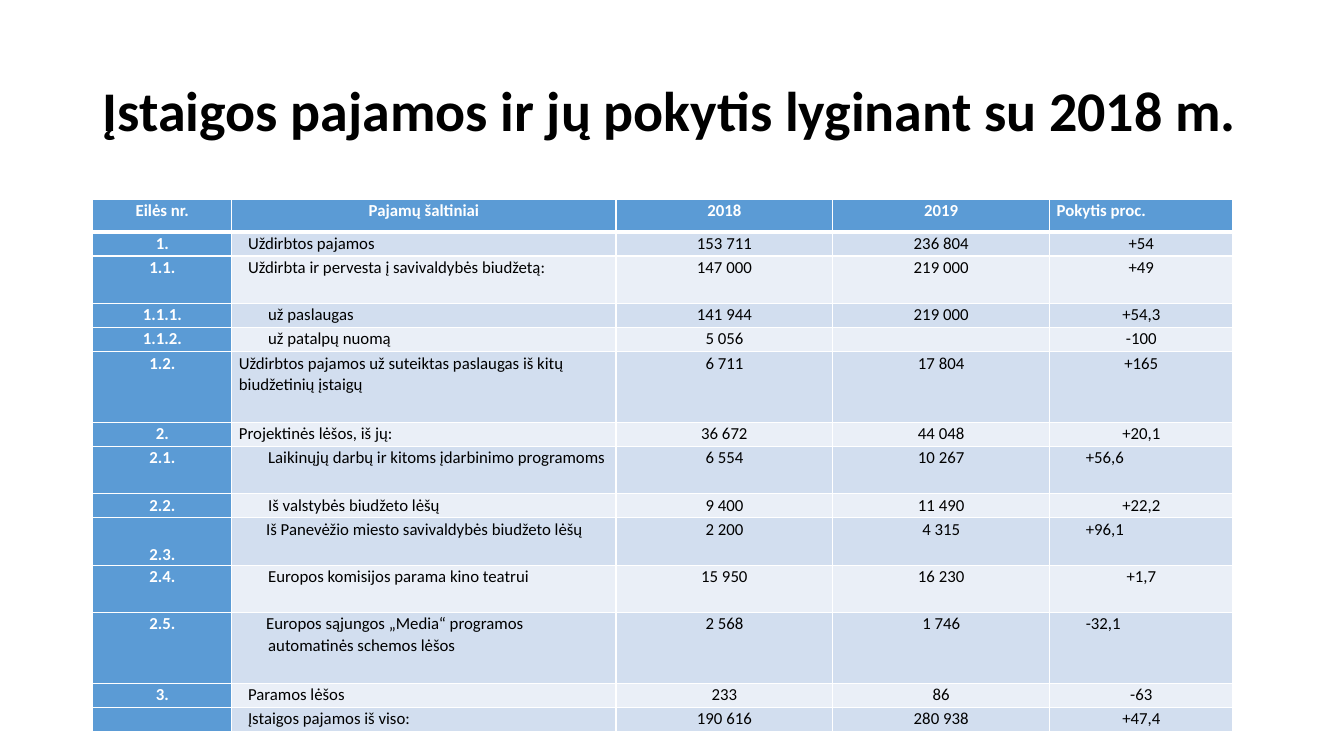
from lxml import etree
from pptx import Presentation
from pptx.dml.color import RGBColor
from pptx.enum.text import MSO_ANCHOR, PP_ALIGN
from pptx.oxml.ns import qn
from pptx.util import Inches, Pt

CENTER, LEFT = PP_ALIGN.CENTER, PP_ALIGN.LEFT
TOP, MIDDLE, BOTTOM = MSO_ANCHOR.TOP, MSO_ANCHOR.MIDDLE, MSO_ANCHOR.BOTTOM
BLACK = RGBColor(0x00, 0x00, 0x00)
WHITE = RGBColor(0xFF, 0xFF, 0xFF)
BLUE = RGBColor(0x5B, 0x9B, 0xD5)
BANDS = (RGBColor(0xD2, 0xDE, 0xEF), RGBColor(0xEA, 0xEF, 0xF7))

TITLE = "Įstaigos pajamos ir jų pokytis lyginant su 2018 m."
TITLE_BOX = (0.92, 0.4, 11.5, 1.45)
TABLE_BOX = (0.92, 1.98, 11.3, 5.26)
TITLE_FONT = {"name": "Calibri", "size": Pt(40), "bold": True}
CELL_FONT = {"name": "Calibri", "size": Pt(12)}
CELL_MARGINS = {"margin_left": Inches(0.07), "margin_right": Inches(0.07),
                "margin_top": 0, "margin_bottom": 0}

COLUMN_WIDTHS = (1.38, 3.81, 2.15, 2.15, 1.82)
HEADER_HEIGHT = 0.32
LINE_HEIGHT = 0.23
ITEM, SUBITEM, HANGING = (0.09, 0), (0.29, 0), (0.29, -0.02)
FLUSH = (0, 0)
HEADINGS = ("Eilės nr.", "Pajamų šaltiniai", "2018", "2019", "Pokytis proc.")
INCOME = (
    (1, ITEM, ("1.", "Uždirbtos pajamos", "153 711", "236 804", "+54")),
    (2, ITEM, ("1.1.", "Uždirbta ir pervesta į savivaldybės biudžetą:",
               "147 000", "219 000", "+49")),
    (1, SUBITEM, ("1.1.1.", "už paslaugas", "141 944", "219 000", "+54,3")),
    (1, SUBITEM, ("1.1.2.", "už patalpų nuomą", "5 056", "", "-100")),
    (3, FLUSH, ("1.2.", "Uždirbtos pajamos už suteiktas paslaugas iš kitų "
                "biudžetinių įstaigų", "6 711", "17 804", "+165")),
    (1, FLUSH, ("2.", "Projektinės lėšos, iš jų:", "36 672", "44 048", "+20,1")),
    (2, SUBITEM, ("2.1.", "Laikinųjų darbų ir kitoms įdarbinimo programoms",
                  "6 554", "10 267", "+56,6")),
    (1, SUBITEM, ("2.2.", "Iš valstybės biudžeto lėšų", "9 400", "11 490", "+22,2")),
    (2, HANGING, ("2.3.", "Iš Panevėžio miesto savivaldybės biudžeto lėšų",
                  "2 200", "4 315", "+96,1")),
    (2, SUBITEM, ("2.4.", "Europos komisijos parama kino teatrui",
                  "15 950", "16 230", "+1,7")),
    (3, HANGING, ("2.5.", "Europos sąjungos „Media“ programos automatinės "
                  "schemos lėšos", "2 568", "1 746", "-32,1")),
    (1, ITEM, ("3.", "Paramos lėšos", "233", "86", "-63")),
    (1, ITEM, ("", "Įstaigos pajamos iš viso:", "190 616", "280 938", "+47,4")),
)
LEFT_CHANGES = ("2.1.", "2.3.", "2.5.")
LOW_NUMBERS = ("2.3.",)


def apply_format(target, values):
    """Set each named attribute of the target."""
    for name, value in values.items():
        setattr(target, name, value)


def add_borders(cell, bottom_width):
    """Draw white lines round a cell."""
    properties = cell._tc.get_or_add_tcPr()
    widths = {"a:lnL": 1, "a:lnR": 1, "a:lnT": 1, "a:lnB": bottom_width}
    for position, (side, width) in enumerate(widths.items()):
        line = etree.Element(qn(side), w=str(Pt(width)))
        fill = etree.SubElement(line, qn("a:solidFill"))
        etree.SubElement(fill, qn("a:srgbClr"), val=str(WHITE))
        properties.insert(position, line)


def fill_cell(cell, text, fill, color, bold, align=CENTER, indent=FLUSH,
              anchor=TOP, bottom_width=1):
    """Write and format one table cell."""
    apply_format(cell, {**CELL_MARGINS, "vertical_anchor": anchor})
    cell.fill.solid()
    cell.fill.fore_color.rgb = fill
    add_borders(cell, bottom_width)
    paragraph = cell.text_frame.paragraphs[0]
    apply_format(paragraph, {"alignment": align, "line_spacing": 1.07})
    margin, first_line = indent
    properties = paragraph._p.get_or_add_pPr()
    properties.set("marL", str(Inches(margin)))
    properties.set("indent", str(Inches(first_line)))
    if text:
        run = paragraph.add_run()
        run.text = text
        apply_format(run.font, {**CELL_FONT, "bold": bold})
        run.font.color.rgb = color
    else:
        etree.SubElement(paragraph._p, qn("a:endParaRPr"), sz="1200")


def add_title(slide, box):
    """Place the slide title in the box."""
    title = slide.shapes.title
    apply_format(title, dict(zip(("left", "top", "width", "height"), map(Inches, box))))
    frame = title.text_frame
    apply_format(frame, {"text": TITLE, "vertical_anchor": MIDDLE, "word_wrap": True})
    heading = frame.paragraphs[0]
    apply_format(heading, {"alignment": LEFT, "line_spacing": 0.9})
    apply_format(heading.runs[0].font, TITLE_FONT)
    heading.runs[0].font.color.rgb = BLACK


def add_income_table(slide, box):
    """Place the income table in the box."""
    table = slide.shapes.add_table(len(INCOME) + 1, len(HEADINGS),
                                   *map(Inches, box)).table
    table.first_col = True
    for column, width in zip(table.columns, COLUMN_WIDTHS):
        column.width = Inches(width)
    table.rows[0].height = Inches(HEADER_HEIGHT)
    for column, heading in enumerate(HEADINGS):
        align = LEFT if column == len(HEADINGS) - 1 else CENTER
        fill_cell(table.cell(0, column), heading, BLUE, WHITE, True, align,
                  bottom_width=3)
    for row, (lines, source_indent, values) in enumerate(INCOME, 1):
        table.rows[row].height = Inches(0.01 + LINE_HEIGHT * lines)
        number, source, *years, change = values
        band = BANDS[(row - 1) % 2]
        number_anchor = BOTTOM if number in LOW_NUMBERS else TOP
        change_align, change_indent = (
            (LEFT, SUBITEM) if number in LEFT_CHANGES else (CENTER, FLUSH))
        fill_cell(table.cell(row, 0), number, BLUE, WHITE, True, anchor=number_anchor)
        fill_cell(table.cell(row, 1), source, band, BLACK, False, LEFT, source_indent)
        for column, amount in enumerate(years, 2):
            fill_cell(table.cell(row, column), amount, band, BLACK, False)
        fill_cell(table.cell(row, 4), change, band, BLACK, False,
                  change_align, change_indent)


def main():
    """Build and save the income slide."""
    presentation = Presentation()
    apply_format(presentation, {"slide_width": Inches(13.33),
                                "slide_height": Inches(7.5)})
    slide = presentation.slides.add_slide(presentation.slide_layouts[5])
    add_title(slide, TITLE_BOX)
    add_income_table(slide, TABLE_BOX)
    presentation.save("out.pptx")


if __name__ == "__main__":
    main()
